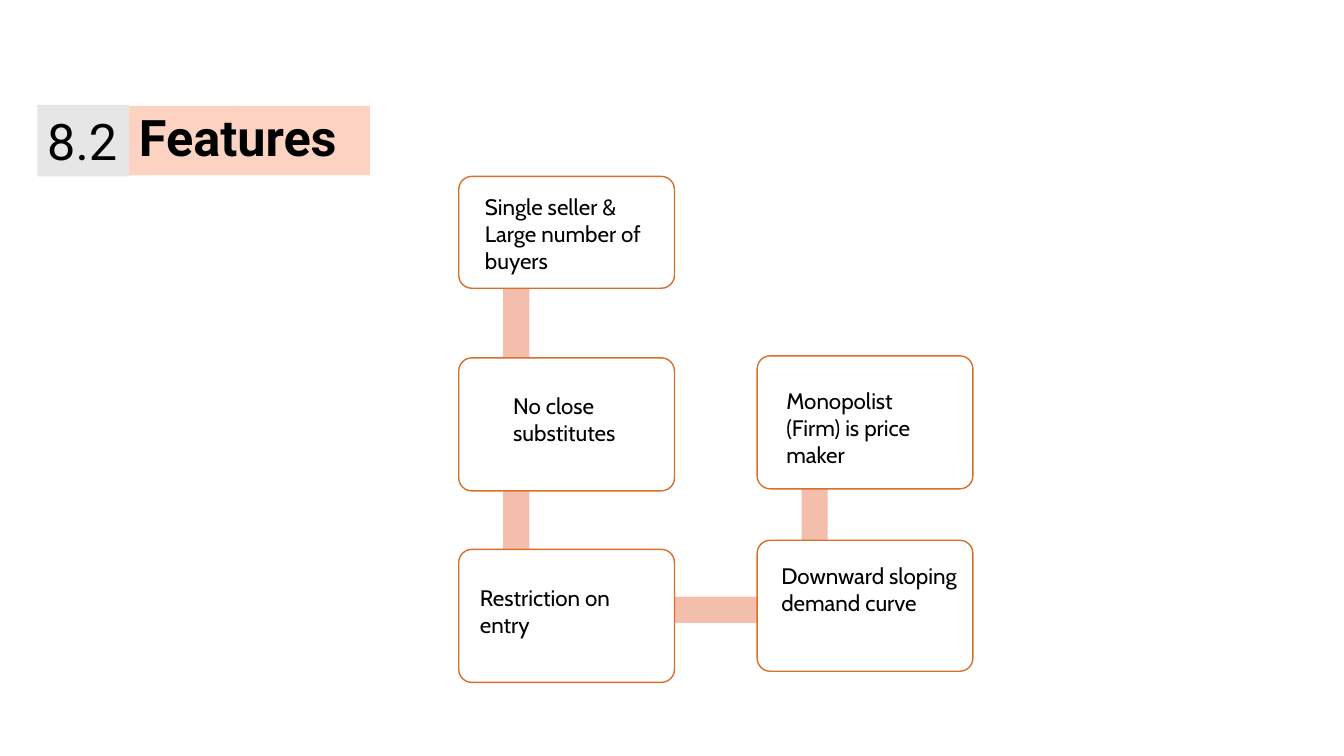
from collections import namedtuple

from pptx import Presentation
from pptx.dml.color import RGBColor
from pptx.enum.shapes import MSO_SHAPE as SHAPE
from pptx.enum.text import MSO_ANCHOR as ANCHOR, PP_ALIGN as ALIGN
from pptx.util import Emu, Pt

PX = 9144  # 100 px to the inch
BLANK = 6
BLACK, WHITE, GREY = "000000", "FFFFFF", "E7E6E6"
PEACH, SALMON, ORANGE = "FCD3C2", "F4BEAC", "D6702B"

Box = namedtuple("Box", "x y w h")


def px(n):
    return Emu(round(n * PX))


def rgb(value):
    return RGBColor.from_string(value)


def write(tf, text, font="Cabin", size=16, bold=False, spacing=1.0,
          anchor=ANCHOR.TOP, margins=(0, 0)):
    tf.word_wrap = True
    tf.vertical_anchor = anchor
    tf.margin_left = tf.margin_right = px(margins[0])
    tf.margin_top = tf.margin_bottom = px(margins[1])
    p = tf.paragraphs[0]
    p.alignment = ALIGN.LEFT
    p.line_spacing = spacing
    r = p.add_run()
    r.text = text
    r.font.name, r.font.size, r.font.bold = font, Pt(size), bold
    r.font.color.rgb = rgb(BLACK)


class FeatureSlide:
    corner = 13
    bar_width = 26
    bar_indent = 44
    bar_drop = 47

    def __init__(self, prs):
        self.shapes = prs.slides.add_slide(prs.slide_layouts[BLANK]).shapes

    def shape(self, kind, box, fill, line=None):
        s = self.shapes.add_shape(kind, *map(px, box))
        s.shadow.inherit = False
        s.fill.solid()
        s.fill.fore_color.rgb = rgb(fill)
        if line:
            s.line.color.rgb = rgb(line)
            s.line.width = Pt(1)
        else:
            s.line.fill.background()
        return s

    def heading(self, box, fill, text, **fmt):
        s = self.shape(SHAPE.RECTANGLE, box, fill)
        write(s.text_frame, text, font="Roboto", size=36,
              anchor=ANCHOR.MIDDLE, margins=(10, 5), **fmt)

    def bar_down(self, upper, lower):
        top = upper.y + upper.h
        self.shape(SHAPE.RECTANGLE, Box(upper.x + self.bar_indent, top,
                                        self.bar_width, lower.y - top), SALMON)

    def bar_across(self, left, right):
        start = left.x + left.w
        self.shape(SHAPE.RECTANGLE, Box(start, left.y + self.bar_drop,
                                        right.x - start, self.bar_width), SALMON)

    def card(self, box):
        s = self.shape(SHAPE.ROUNDED_RECTANGLE, box, WHITE, ORANGE)
        s.adjustments[0] = self.corner / min(box.w, box.h)

    def label(self, box, text):
        s = self.shapes.add_textbox(*map(px, box))
        write(s.text_frame, text)


def main():
    prs = Presentation()
    prs.slide_width, prs.slide_height = px(1333), px(750)
    s = FeatureSlide(prs)

    s.heading(Box(128, 105, 239, 69), PEACH, "Features", bold=True, spacing=0.9)
    s.heading(Box(37, 104, 91, 71), GREY, "8.2")

    seller = Box(455, 175, 214, 111)
    substitutes = Box(455, 355, 214, 132)
    entry = Box(455, 545, 214, 132)
    demand = Box(751, 536, 214, 130)
    price = Box(751, 353, 214, 132)

    s.bar_down(seller, substitutes)
    s.bar_down(substitutes, entry)
    s.bar_down(price, demand)
    s.bar_across(entry, demand)

    features = [
        (seller, Box(481, 192, 186, 85), "Single seller & Large number of buyers"),
        (substitutes, Box(509, 389, 123, 54), "No close substitutes"),
        (entry, Box(476, 580, 167, 54), "Restriction on entry"),
        (demand, Box(775, 558, 190, 54), "Downward sloping demand curve"),
        (price, Box(780, 384, 157, 81), "Monopolist (Firm) is price maker"),
    ]
    for card, label, text in features:
        s.card(card)
        s.label(label, text)

    prs.save("out.pptx")


if __name__ == "__main__":
    main()
